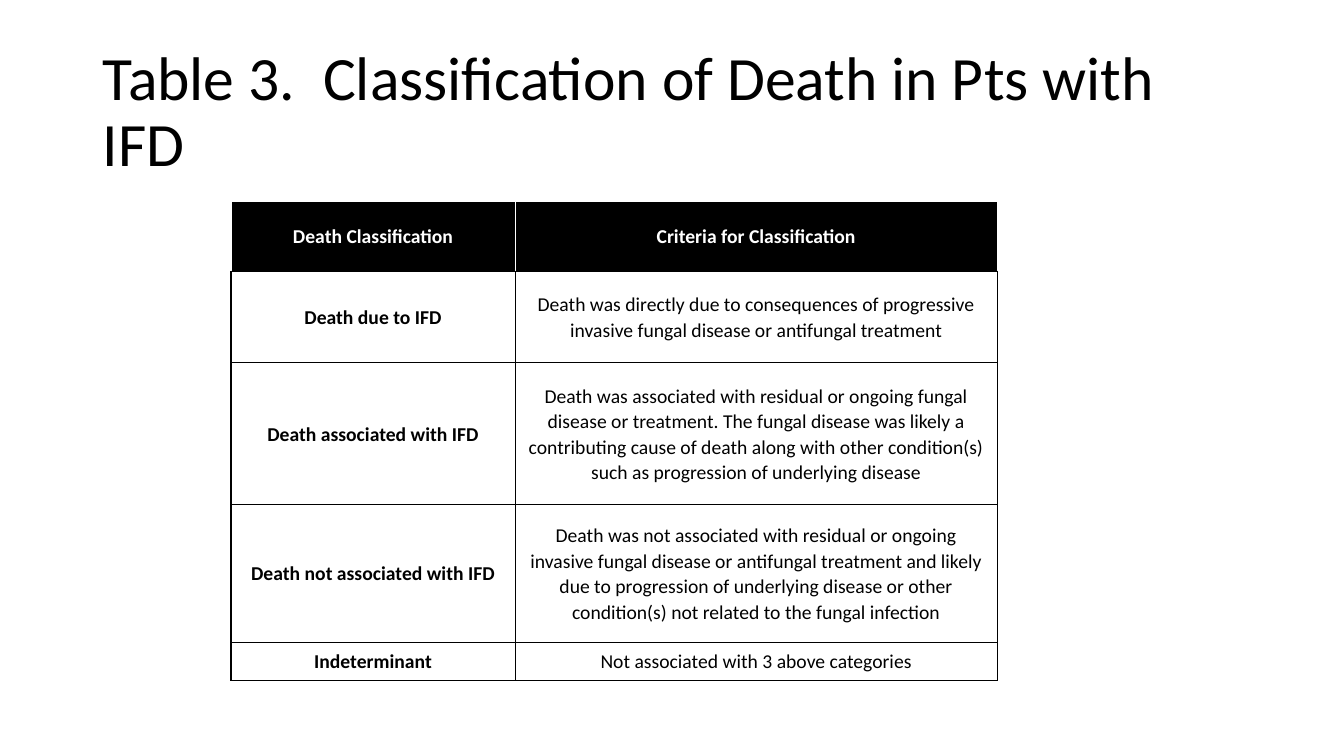
from dataclasses import dataclass

from lxml import etree
from pptx import Presentation
from pptx.dml.color import RGBColor
from pptx.enum.text import MSO_ANCHOR, PP_ALIGN
from pptx.oxml.ns import qn
from pptx.util import Inches, Pt

MIDDLE = MSO_ANCHOR.MIDDLE
CENTER = PP_ALIGN.CENTER
LEFT = PP_ALIGN.LEFT
BLACK = RGBColor(0x00, 0x00, 0x00)
WHITE = RGBColor(0xFF, 0xFF, 0xFF)
FONT = "Calibri"

SLIDE_WIDTH = Inches(13.33)
SLIDE_HEIGHT = Inches(7.5)
GRID_STEPS = 100
COLUMN_WIDTHS = (21.16, 35.86)
TABLE_LEFT = 17.18
TABLE_TOP = 26.67
BORDER_WIDTH = Pt(1)


@dataclass(frozen=True)
class DeathClass:
    name: str
    criteria: str
    height: float
    is_header: bool = False


DEATH_CLASSES = (
    DeathClass("Death Classification", "Criteria for Classification", 9.2, True),
    DeathClass(
        "Death due to IFD",
        "Death was directly due to consequences of progressive invasive fungal "
        "disease or antifungal treatment",
        12.13,
    ),
    DeathClass(
        "Death associated with IFD",
        "Death was associated with residual or ongoing fungal disease or treatment. "
        "The fungal disease was likely a contributing cause of death along with "
        "other condition(s) such as progression of underlying disease",
        18.75,
    ),
    DeathClass(
        "Death not associated with IFD",
        "Death was not associated with residual or ongoing invasive fungal disease "
        "or antifungal treatment and likely due to progression of underlying "
        "disease or other condition(s) not related to the fungal infection",
        18.2,
    ),
    DeathClass("Indeterminant", "Not associated with 3 above categories", 5.07),
)


def columns(count: float) -> int:
    return round(SLIDE_WIDTH * count / GRID_STEPS)


def rows(count: float) -> int:
    return round(SLIDE_HEIGHT * count / GRID_STEPS)


def write(frame, text: str, size: float, color: RGBColor, bold: bool,
          alignment, spacing: float) -> None:
    frame.text = text
    paragraph = frame.paragraphs[0]
    paragraph.alignment = alignment
    paragraph.line_spacing = spacing
    font = paragraph.runs[0].font
    font.name = FONT
    font.size = Pt(size)
    font.bold = bold
    font.color.rgb = color


def add_borders(cell, is_header: bool) -> None:
    properties = cell._tc.get_or_add_tcPr()
    for position, side in enumerate("LRTB"):
        color = WHITE if is_header and side != "B" else BLACK
        border = etree.Element(qn(f"a:ln{side}"), w=str(BORDER_WIDTH))
        fill = etree.SubElement(border, qn("a:solidFill"))
        etree.SubElement(fill, qn("a:srgbClr"), val=str(color))
        properties.insert(position, border)


def format_cell(cell, text: str, is_header: bool, bold: bool) -> None:
    cell.vertical_anchor = MIDDLE
    cell.margin_left = cell.margin_right = Inches(0.07)
    cell.margin_top = cell.margin_bottom = 0
    cell.fill.solid()
    cell.fill.fore_color.rgb = BLACK if is_header else WHITE
    write(cell.text_frame, text, 14, WHITE if is_header else BLACK, bold, CENTER, 1.07)
    add_borders(cell, is_header)


def add_title(slide) -> None:
    title = slide.shapes.title
    title.left, title.top = columns(6.9), rows(5.33)
    title.width, title.height = columns(86.27), rows(19.33)
    frame = title.text_frame
    frame.word_wrap = True
    frame.vertical_anchor = MIDDLE
    write(frame, "Table 3.  Classification of Death in Pts with IFD",
          44, BLACK, False, LEFT, 0.9)


def add_classification(slide) -> None:
    classification = slide.shapes.add_table(
        len(DEATH_CLASSES), len(COLUMN_WIDTHS),
        columns(TABLE_LEFT), rows(TABLE_TOP),
        columns(sum(COLUMN_WIDTHS)),
        rows(sum(death.height for death in DEATH_CLASSES)),
    ).table
    classification.horz_banding = False
    for column, width in zip(classification.columns, COLUMN_WIDTHS):
        column.width = columns(width)
    for row, death in zip(classification.rows, DEATH_CLASSES):
        row.height = rows(death.height)
        name, criteria = row.cells
        format_cell(name, death.name, death.is_header, True)
        format_cell(criteria, death.criteria, death.is_header, death.is_header)


def main() -> None:
    presentation = Presentation()
    presentation.slide_width = SLIDE_WIDTH
    presentation.slide_height = SLIDE_HEIGHT
    slide = presentation.slides.add_slide(presentation.slide_layouts[5])
    add_title(slide)
    add_classification(slide)
    presentation.save("out.pptx")


if __name__ == "__main__":
    main()
